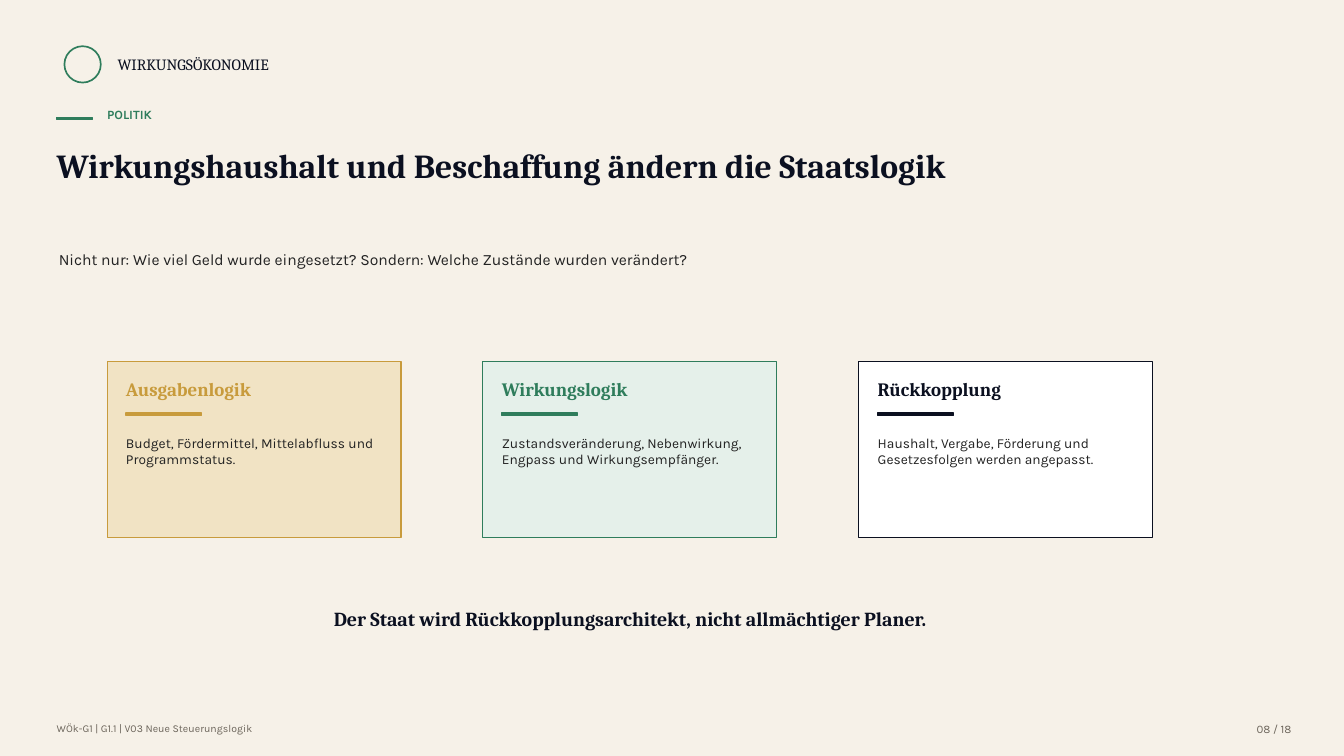
from dataclasses import dataclass

from pptx import Presentation
from pptx.dml.color import RGBColor
from pptx.enum import shapes, text
from pptx.util import Pt


@dataclass(frozen=True)
class Theme:
    paper: str = "F6F1E8"
    ink: str = "0B1020"
    green: str = "2F7D5C"
    gold: str = "C89B3C"
    pale_green: str = "E5F0EA"
    pale_gold: str = "F1E3C4"
    white: str = "FFFFFF"
    body: str = "222222"
    muted: str = "6C655B"
    serif: str = "Cambria"
    sans: str = "Karla"
    title_size: float = 24
    closing_size: float = 14.2
    card_title_size: float = 13.5
    lead_size: float = 11.2
    card_body_size: float = 9.8
    label_size: float = 9
    page_size: float = 8.2
    footer_size: float = 7.5


THEME = Theme()
MARGIN = 40.5
CARD_LEFT, CARD_TOP, CARD_STEP = 76.5, 258, 268.5
CARD_WIDTH, CARD_HEIGHT, CARD_PADDING = 210, 126, 13.5


def add_text(slide, wording, box, size, color, font=THEME.sans, bold=False,
             align=text.PP_ALIGN.LEFT):
    text_box = slide.shapes.add_textbox(*map(Pt, box))
    text_frame = text_box.text_frame
    text_frame.word_wrap = True
    text_frame.margin_left = text_frame.margin_right = 0
    text_frame.margin_top = text_frame.margin_bottom = 0
    text_frame.text = wording
    paragraph = text_frame.paragraphs[0]
    paragraph.alignment = align
    run_font = paragraph.runs[0].font
    run_font.name = font
    run_font.size = Pt(size)
    run_font.bold = bold
    run_font.color.rgb = RGBColor.from_string(color)


def add_figure(slide, box, fill, line, line_width,
               kind=shapes.MSO_SHAPE.RECTANGLE):
    """Add a preset shape; a fill of None leaves it hollow."""
    shape = slide.shapes.add_shape(kind, *map(Pt, box))
    shape.shadow.inherit = False
    if fill:
        shape.fill.solid()
        shape.fill.fore_color.rgb = RGBColor.from_string(fill)
    else:
        shape.fill.background()
    shape.line.color.rgb = RGBColor.from_string(line)
    shape.line.width = Pt(line_width)


def add_rule(slide, left, top, width, color):
    add_figure(slide, (left, top, width, 1.5), color, color, 0)


def add_header(slide):
    add_figure(slide, (46, 33, 26, 26), None, THEME.green, 1.2,
               shapes.MSO_SHAPE.OVAL)
    add_text(slide, "WIRKUNGSÖKONOMIE", (84, 39.5, 187, 16.5),
             THEME.lead_size, THEME.ink, THEME.serif)
    add_rule(slide, MARGIN, 84, 25.5, THEME.green)
    add_text(slide, "POLITIK", (CARD_LEFT, 76.5, 345, 18),
             THEME.label_size, THEME.green, bold=True)
    add_text(slide, "Wirkungshaushalt und Beschaffung ändern die Staatslogik",
             (MARGIN, 103.5, 698, 67.5), THEME.title_size, THEME.ink,
             THEME.serif, bold=True)


def add_card(slide, index, title, body, fill, accent):
    left = CARD_LEFT + index * CARD_STEP
    inner_left = left + CARD_PADDING
    inner_width = CARD_WIDTH - 2 * CARD_PADDING
    add_figure(slide, (left, CARD_TOP, CARD_WIDTH, CARD_HEIGHT),
               fill, accent, 0.75)
    add_text(slide, title, (inner_left, CARD_TOP + 12, inner_width, 18),
             THEME.card_title_size, accent, THEME.serif, bold=True)
    add_rule(slide, inner_left, CARD_TOP + 37, 54, accent)
    add_text(slide, body, (inner_left, CARD_TOP + 52.5, inner_width, 61),
             THEME.card_body_size, THEME.body)


def add_footer(slide):
    add_text(slide, "WÖk-G1 | G1.1 | V03 Neue Steuerungslogik",
             (MARGIN, 516, 420, 13.5), THEME.footer_size, THEME.muted)
    add_text(slide, "08 / 18", (870, 516, 52.5, 13.5), THEME.page_size,
             THEME.muted, align=text.PP_ALIGN.RIGHT)


def main():
    presentation = Presentation()
    presentation.slide_width, presentation.slide_height = Pt(960), Pt(540)
    slide = presentation.slides.add_slide(presentation.slide_layouts[6])
    background = slide.background.fill
    background.solid()
    background.fore_color.rgb = RGBColor.from_string(THEME.paper)

    add_header(slide)
    add_text(slide, "Nicht nur: Wie viel Geld wurde eingesetzt? "
             "Sondern: Welche Zustände wurden verändert?",
             (42, 178.5, 630, 31.5), THEME.lead_size, THEME.body)
    cards = [
        ("Ausgabenlogik",
         "Budget, Fördermittel, Mittelabfluss und Programmstatus.",
         THEME.pale_gold, THEME.gold),
        ("Wirkungslogik",
         "Zustandsveränderung, Nebenwirkung, Engpass und Wirkungsempfänger.",
         THEME.pale_green, THEME.green),
        ("Rückkopplung",
         "Haushalt, Vergabe, Förderung und Gesetzesfolgen werden angepasst.",
         THEME.white, THEME.ink),
    ]
    for index, card in enumerate(cards):
        add_card(slide, index, *card)
    add_text(slide, "Der Staat wird Rückkopplungsarchitekt, "
             "nicht allmächtiger Planer.", (223.5, 433.5, 453, 18),
             THEME.closing_size, THEME.ink, THEME.serif, bold=True,
             align=text.PP_ALIGN.CENTER)
    add_footer(slide)
    presentation.save("out.pptx")


if __name__ == "__main__":
    main()
